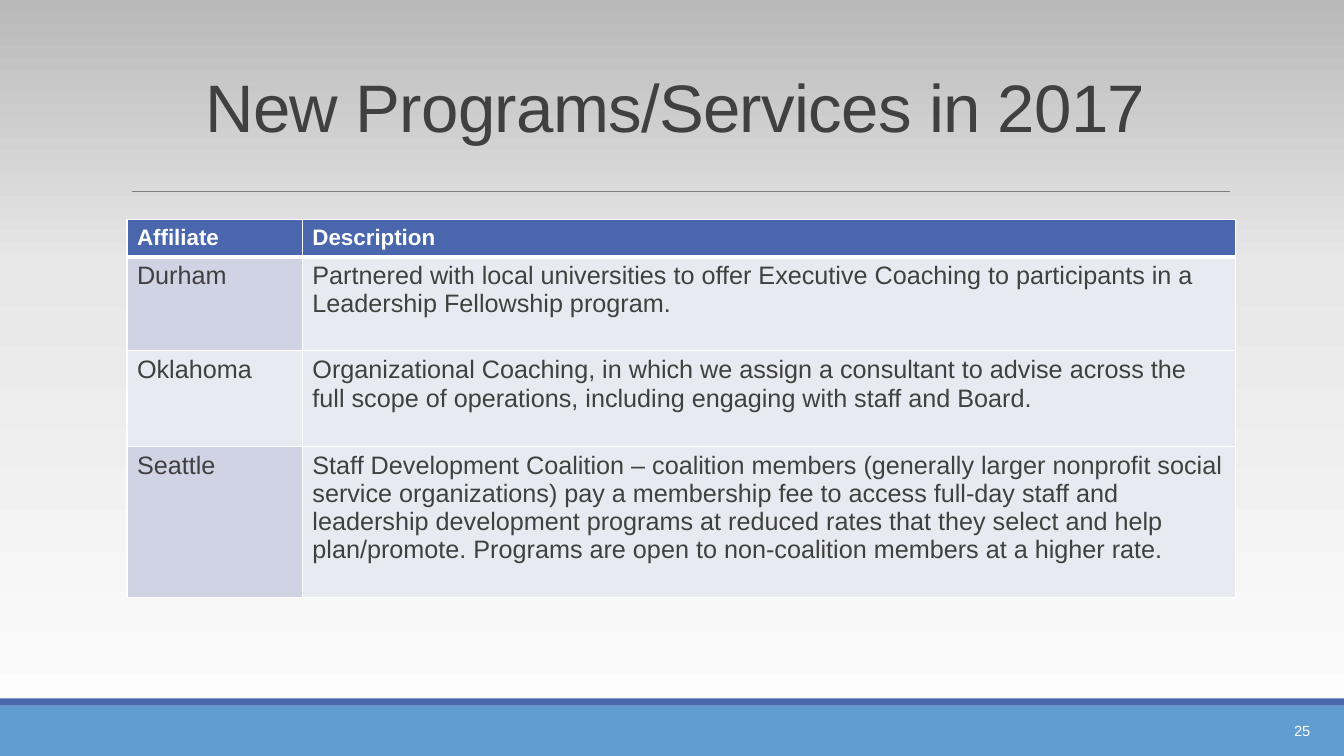
from lxml.etree import SubElement
from copy import deepcopy
from pptx import Presentation
from pptx.dml.color import RGBColor
from pptx.enum.shapes import MSO_CONNECTOR, MSO_SHAPE
from pptx.enum.text import MSO_ANCHOR as ANCHOR, PP_ALIGN as ALIGN
from pptx.oxml.ns import qn
from pptx.util import Cm, Pt

FONT = "Arial"
WHITE, DARK, GRAY = "FFFFFF", "404040", "808080"
NAVY, SKY = "4A66AC", "629DD1"
BAND, PALE = "D0D3E3", "E9EAF1"
WIDTH, HEIGHT = 33.87, 19.05
FOOTER_TOP, STRIPE = 17.78, 0.18
COLUMN_WIDTHS = (4.42, 23.52)
ROW_HEIGHTS = (0.89, 2.37, 2.4, 3.82)
ROWS = (
    ("Affiliate", "Description"),
    ("Durham", "Partnered with local universities to offer Executive Coaching "
     "to participants in a Leadership Fellowship program."),
    ("Oklahoma", "Organizational Coaching, in which we assign a consultant to "
     "advise across the full scope of operations, including engaging with "
     "staff and Board."),
    ("Seattle", "Staff Development Coalition – coalition members (generally "
     "larger nonprofit social service organizations) pay a membership fee to "
     "access full-day staff and leadership development programs at reduced "
     "rates that they select and help plan/promote. Programs are open to "
     "non-coalition members at a higher rate."),
)


def rgb(color):
    return RGBColor.from_string(color)


def fill_solid(fill, color):
    fill.solid()
    fill.fore_color.rgb = rgb(color)


def set_background(s, stops):
    """Fill the slide with a vertical gradient, first stop at the bottom."""
    fill = s.background.fill
    fill.gradient()
    fill.gradient_angle = 90
    stop_list = s.element.find(".//" + qn("a:gsLst"))
    while len(stop_list) < len(stops):
        stop_list.append(deepcopy(stop_list[0]))
    for stop, (position, color) in zip(fill.gradient_stops, stops):
        stop.position = position
        stop.color.rgb = rgb(color)


def add_bar(s, top, height, color):
    sp = s.shapes.add_shape(MSO_SHAPE.RECTANGLE, 0, Cm(top), Cm(WIDTH), Cm(height))
    sp.shadow.inherit = False
    fill_solid(sp.fill, color)
    sp.line.fill.background()


def add_rule(s, left, right, y):
    line = s.shapes.add_connector(MSO_CONNECTOR.STRAIGHT, Cm(left), Cm(y), Cm(right), Cm(y))
    line.line.color.rgb = rgb(GRAY)
    line.line.width = Pt(0.5)
    SubElement(line._element.spPr, qn("a:effectLst"))


def write(tf, text, size, color, bold=False):
    p = tf.paragraphs[0]
    p.text = text
    font = p.runs[0].font
    font.name, font.size, font.bold = FONT, Pt(size), bold
    font.color.rgb = rgb(color)
    return p


def add_text(s, box, text, size, color, align):
    tf = s.shapes.add_textbox(*map(Cm, box)).text_frame
    tf.word_wrap = True
    tf.vertical_anchor = ANCHOR.MIDDLE
    p = write(tf, text, size, color)
    p.alignment = align
    return p


def set_borders(cell, widths):
    """Draw white borders; widths are points for left, right, top, bottom."""
    tc_pr = cell._tc.get_or_add_tcPr()
    for i, (side, width) in enumerate(zip("LRTB", widths)):
        ln = SubElement(tc_pr, qn(f"a:ln{side}"), w=str(Pt(width)))
        SubElement(SubElement(ln, qn("a:solidFill")), qn("a:srgbClr"), val=WHITE)
        tc_pr.insert(i, ln)


def add_programs_table(s, left, top):
    table = s.shapes.add_table(
        len(ROWS), len(COLUMN_WIDTHS), Cm(left), Cm(top),
        Cm(sum(COLUMN_WIDTHS)), Cm(sum(ROW_HEIGHTS))).table
    table.horz_banding = False
    for column, width in zip(table.columns, COLUMN_WIDTHS):
        column.width = Cm(width)
    for i, (row, height, texts) in enumerate(zip(table.rows, ROW_HEIGHTS, ROWS)):
        row.height = Cm(height)
        header = i == 0
        for j, (cell, text) in enumerate(zip(row.cells, texts)):
            if header:
                write(cell.text_frame, text, 16, WHITE, bold=True)
                fill_solid(cell.fill, NAVY)
            else:
                write(cell.text_frame, text, 18, DARK)
                fill_solid(cell.fill, BAND if j == 0 and i % 2 else PALE)
            set_borders(cell, (1, 1, 3 if i == 1 else 1, 3 if header else 1))


def main():
    prs = Presentation()
    prs.slide_width, prs.slide_height = Cm(WIDTH), Cm(HEIGHT)
    s = prs.slides.add_slide(prs.slide_layouts[6])
    set_background(s, ((0, "FEFEFE"), (0.65, "E7E7E7"), (1, "B9B9B9")))
    add_bar(s, FOOTER_TOP, HEIGHT - FOOTER_TOP, SKY)
    add_bar(s, FOOTER_TOP - STRIPE, STRIPE, NAVY)
    add_rule(s, 3.33, 31, 4.83)
    title = add_text(s, (3.05, 0.79, 27.94, 4.04), "New Programs/Services in 2017",
                     48, DARK, ALIGN.CENTER)
    title.line_spacing = 0.85
    title.runs[0].font._element.set("spc", "-50")
    add_text(s, (29.64, 17.91, 3.63, 1.02), "25", 10.5, WHITE, ALIGN.RIGHT)
    add_programs_table(s, 3.2, 5.54)
    prs.save("out.pptx")


if __name__ == "__main__":
    main()
